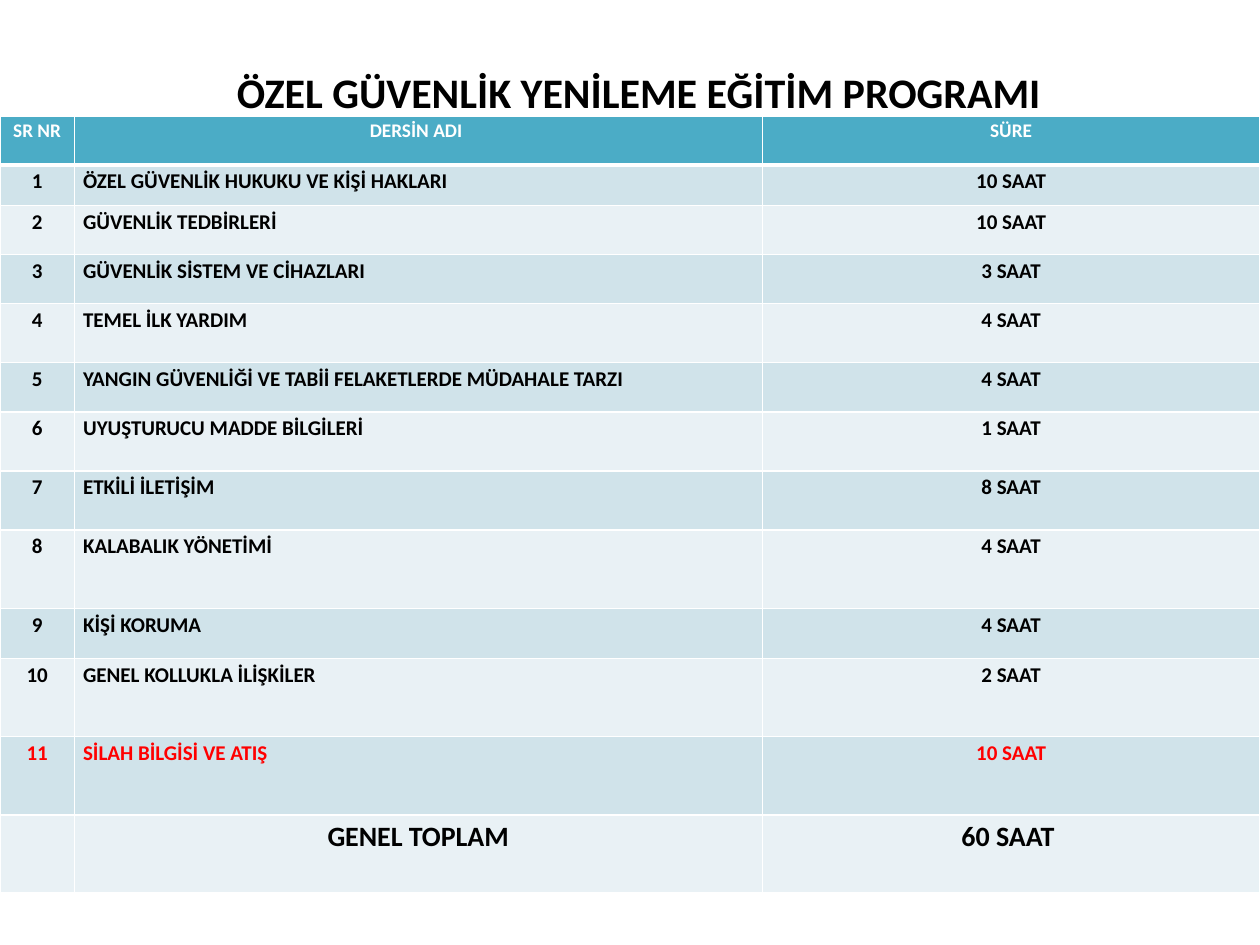
from dataclasses import dataclass

from lxml.etree import SubElement
from pptx import Presentation
from pptx.dml.color import RGBColor
from pptx.enum.text import MSO_ANCHOR, PP_ALIGN
from pptx.oxml.ns import qn
from pptx.util import Inches, Pt

FONT = "Calibri"
WHITE, BLACK, RED = "FFFFFF", "000000", "FF0000"
HEADER_FILL = "4BACC6"
BAND_FILLS = ("D0E3EA", "E9F1F5")
COLUMN_WIDTHS = (0.59, 5.46, 3.95)


@dataclass
class Row:
    height: float
    number: str
    name: str
    duration: str
    size: int = 12
    color: str = BLACK
    name_align: PP_ALIGN = PP_ALIGN.JUSTIFY


ROWS = [
    Row(0.39, "SR NR", "DERSİN ADI ", "SÜRE", 11, WHITE, PP_ALIGN.CENTER),
    Row(0.32, "1", "ÖZEL GÜVENLİK HUKUKU VE KİŞİ HAKLARI", "10 SAAT"),
    Row(0.39, "2", "GÜVENLİK TEDBİRLERİ", "10 SAAT"),
    Row(0.39, "3", "GÜVENLİK SİSTEM VE CİHAZLARI ", "3 SAAT"),
    Row(0.47, "4", "TEMEL İLK YARDIM", "4 SAAT"),
    Row(0.39, "5", "YANGIN GÜVENLİĞİ VE TABİİ FELAKETLERDE MÜDAHALE TARZI", "4 SAAT"),
    Row(0.47, "6", "UYUŞTURUCU MADDE BİLGİLERİ", "1 SAAT"),
    Row(0.47, "7", "ETKİLİ İLETİŞİM", "8 SAAT"),
    Row(0.62, "8", "KALABALIK YÖNETİMİ", "4 SAAT"),
    Row(0.4, "9", "KİŞİ KORUMA", "4 SAAT"),
    Row(0.62, "10", "GENEL KOLLUKLA İLİŞKİLER", "2 SAAT"),
    Row(0.62, "11", "SİLAH BİLGİSİ VE ATIŞ", "10 SAAT", color=RED),
    Row(0.62, "", "GENEL TOPLAM", "60 SAAT ", 16, name_align=PP_ALIGN.CENTER),
]


def rgb(color: str) -> RGBColor:
    return RGBColor.from_string(color)


def add_run(p, text: str, size: int, color: str) -> None:
    r = p.add_run()
    r.text = text
    r.font.name = FONT
    r.font.size = Pt(size)
    r.font.bold = True
    r.font.color.rgb = rgb(color)


def set_borders(cell, top: int, bottom: int) -> None:
    """Draw white borders; widths are in points, the sides are 1 pt."""
    tc_pr = cell._tc.get_or_add_tcPr()
    widths = {"a:lnL": 1, "a:lnR": 1, "a:lnT": top, "a:lnB": bottom}
    for i, (tag, width) in enumerate(widths.items()):
        ln = SubElement(tc_pr, qn(tag), w=str(Pt(width)))
        fill = SubElement(ln, qn("a:solidFill"))
        SubElement(fill, qn("a:srgbClr"), val=WHITE)
        tc_pr.insert(i, ln)


def fill_cell(cell, text: str, row: Row, align: PP_ALIGN, fill: str) -> None:
    cell.fill.solid()
    cell.fill.fore_color.rgb = rgb(fill)
    cell.margin_left = cell.margin_right = Inches(0.07)
    cell.margin_top = cell.margin_bottom = 0
    p = cell.text_frame.paragraphs[0]
    p.alignment = align
    p.line_spacing = 1.15
    if text:
        add_run(p, text, row.size, row.color)


def add_title(slide, text: str) -> None:
    title = slide.shapes.title
    title.left, title.top = Inches(0.57), Inches(0.3)
    title.width, title.height = Inches(9), Inches(0.85)
    tf = title.text_frame
    tf.vertical_anchor = MSO_ANCHOR.MIDDLE
    p = tf.paragraphs[0]
    p.alignment = PP_ALIGN.CENTER
    add_run(p, text, 24, BLACK)


def add_course_table(slide, rows: list[Row]) -> None:
    height = sum(row.height for row in rows)
    table = slide.shapes.add_table(
        len(rows), len(COLUMN_WIDTHS), 0, Inches(0.92), Inches(10), Inches(height)
    ).table
    for column, width in zip(table.columns, COLUMN_WIDTHS):
        column.width = Inches(width)
    for i, row in enumerate(rows):
        table.rows[i].height = Inches(row.height)
        fill = BAND_FILLS[(i - 1) % 2] if i else HEADER_FILL
        texts = (row.number, row.name, row.duration)
        aligns = (PP_ALIGN.CENTER, row.name_align, PP_ALIGN.CENTER)
        for j, (text, align) in enumerate(zip(texts, aligns)):
            cell = table.cell(i, j)
            fill_cell(cell, text, row, align, fill)
            set_borders(cell, top=3 if i == 1 else 1, bottom=3 if i == 0 else 1)


def main() -> None:
    prs = Presentation()
    prs.slide_width, prs.slide_height = Inches(10), Inches(7.5)
    slide = prs.slides.add_slide(prs.slide_layouts[5])
    add_title(slide, "ÖZEL GÜVENLİK YENİLEME EĞİTİM PROGRAMI")
    add_course_table(slide, ROWS)
    prs.save("out.pptx")


if __name__ == "__main__":
    main()
